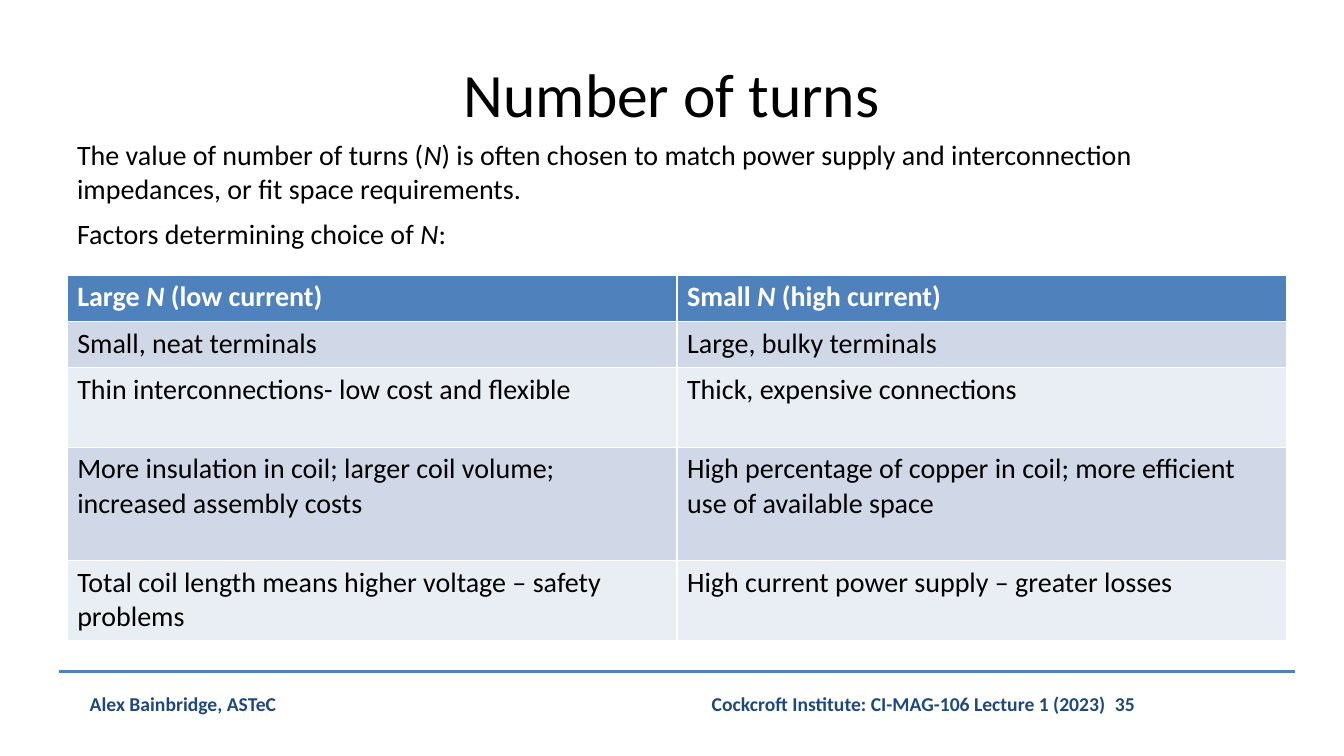
from dataclasses import dataclass

from lxml.etree import SubElement
from pptx import Presentation
from pptx.dml.color import RGBColor
from pptx.enum.shapes import MSO_CONNECTOR
from pptx.enum.text import MSO_ANCHOR, PP_ALIGN
from pptx.oxml.ns import qn
from pptx.util import Pt

TITLE = "Number of turns"
# Text is split into (wording, italic) runs.
INTRO = [
    ("The value of number of turns (", False),
    ("N", True),
    (") is often chosen to match power supply and interconnection "
     "impedances, or fit space requirements.", False),
]
FACTORS = [("Factors determining choice of ", False), ("N", True), (":", False)]
HEADINGS = [
    [("Large ", False), ("N", True), (" (low current)", False)],
    [("Small ", False), ("N", True), (" (high current)", False)],
]
COMPARISON = [
    ("Small, neat terminals", "Large, bulky terminals"),
    ("Thin interconnections- low cost and flexible", "Thick, expensive connections"),
    ("More insulation in coil; larger coil volume; increased assembly costs",
     "High percentage of copper in coil; more efficient use of available space"),
    ("Total coil length means higher voltage – safety problems",
     "High current power supply – greater losses"),
]
AUTHOR = "Alex Bainbridge, ASTeC"
LECTURE = "Cockcroft Institute: CI-MAG-106 Lecture 1 (2023)\t35"


@dataclass(frozen=True)
class Theme:
    font: str = "Calibri"
    ink: str = "000000"
    white: str = "FFFFFF"
    accent: str = "4F81BD"
    footer: str = "1F497D"
    bands: tuple = ("D0D8E8", "E9EDF4")
    title_size: int = 44
    body_size: int = 20
    footer_size: int = 14


THEME = Theme()
LEFT, CONTENT_WIDTH = 48, 864
TABLE_TOP, COLUMN_WIDTH = 196.5, 435.6
ROW_HEIGHTS = [33, 33, 57, 81, 57]
RULE_LEFT, RULE_RIGHT, RULE_Y = 42, 925, 479.5
FOOTER_TOP, FOOTER_HEIGHT = 491, 24.5


def rgb(value):
    return RGBColor.from_string(value)


def write(tf, text, size=THEME.body_size, color=THEME.ink, bold=False,
          align=PP_ALIGN.LEFT):
    """Fill a text frame with a string or a list of (wording, italic) runs."""
    tf.word_wrap = True
    p = tf.paragraphs[0]
    p.alignment = align
    for wording, italic in [(text, False)] if isinstance(text, str) else text:
        r = p.add_run()
        r.text = wording
        r.font.name = THEME.font
        r.font.size = Pt(size)
        r.font.bold = bold
        r.font.italic = italic
        r.font.color.rgb = rgb(color)


def place(sp, left, top, width, height):
    sp.left, sp.top, sp.width, sp.height = map(Pt, (left, top, width, height))


def add_text(s, box, text, **style):
    write(s.shapes.add_textbox(*map(Pt, box)).text_frame, text, **style)


def add_footer(s):
    rule = s.shapes.add_connector(
        MSO_CONNECTOR.STRAIGHT, Pt(RULE_LEFT), Pt(RULE_Y), Pt(RULE_RIGHT), Pt(RULE_Y))
    rule.line.color.rgb = rgb(THEME.accent)
    rule.line.width = Pt(2)
    SubElement(rule._element.spPr, qn("a:effectLst"))
    style = dict(size=THEME.footer_size, color=THEME.footer, bold=True)
    add_text(s, (57, FOOTER_TOP, 370, FOOTER_HEIGHT), AUTHOR, **style)
    add_text(s, (394, FOOTER_TOP, 531, FOOTER_HEIGHT), LECTURE,
             align=PP_ALIGN.CENTER, **style)


def add_comparison(s):
    rows = [HEADINGS, *COMPARISON]
    table = s.shapes.add_table(
        len(rows), len(HEADINGS), Pt(LEFT), Pt(TABLE_TOP),
        Pt(COLUMN_WIDTH * len(HEADINGS)), Pt(sum(ROW_HEIGHTS))).table
    for column in table.columns:
        column.width = Pt(COLUMN_WIDTH)
    for i, (row, height) in enumerate(zip(rows, ROW_HEIGHTS)):
        header = i == 0
        table.rows[i].height = Pt(height)
        for j, text in enumerate(row):
            cell = table.cell(i, j)
            cell.fill.solid()
            cell.fill.fore_color.rgb = rgb(
                THEME.accent if header else THEME.bands[(i - 1) % 2])
            write(cell.text_frame, text, bold=header,
                  color=THEME.white if header else THEME.ink)


def main():
    prs = Presentation()
    prs.slide_width, prs.slide_height = Pt(960), Pt(540)
    s = prs.slides.add_slide(prs.slide_layouts[5])
    add_footer(s)
    title = s.shapes.title
    place(title, LEFT, 21.6, CONTENT_WIDTH, 90)
    title.text_frame.vertical_anchor = MSO_ANCHOR.MIDDLE
    write(title.text_frame, TITLE, size=THEME.title_size, align=PP_ALIGN.CENTER)
    add_text(s, (LEFT, 95, CONTENT_WIDTH, 55.5), INTRO)
    add_text(s, (LEFT, 151, 663, 31.5), FACTORS)
    add_comparison(s)
    prs.save("out.pptx")


if __name__ == "__main__":
    main()
